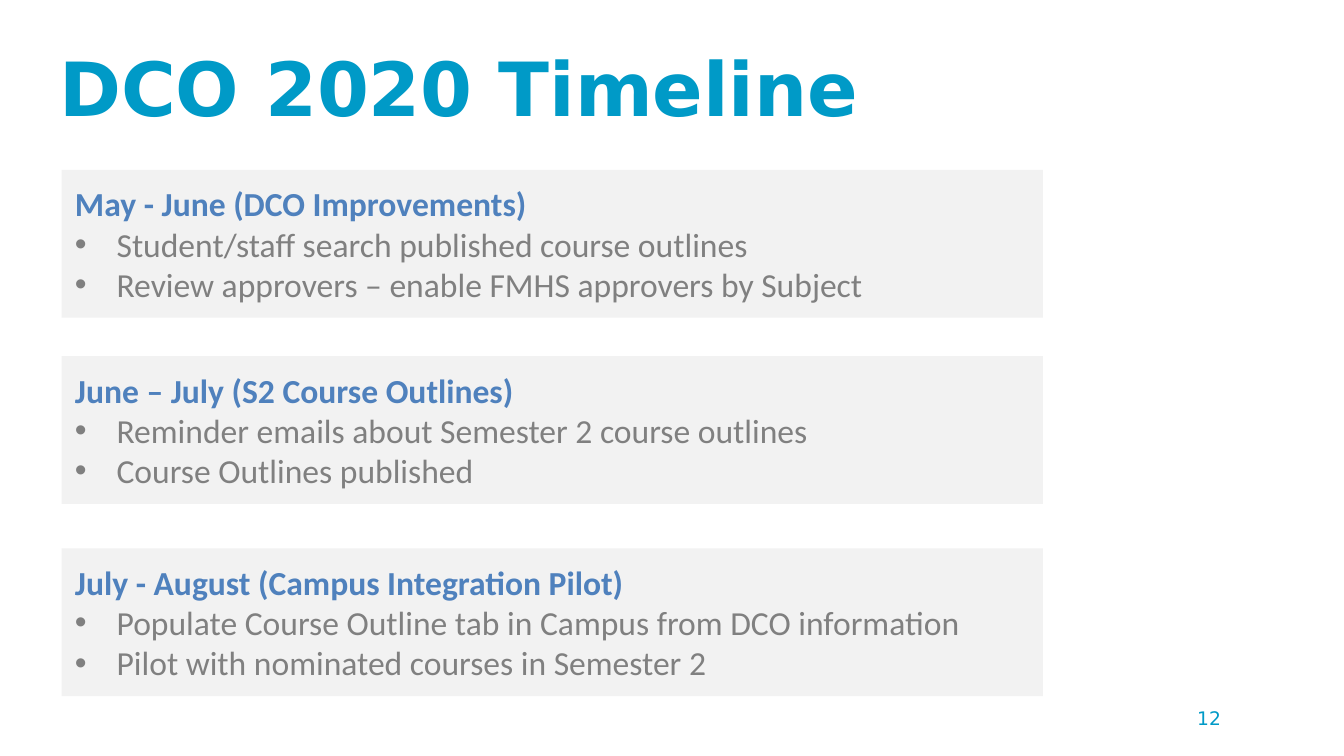
"""Build the DCO 2020 timeline slide."""
from dataclasses import dataclass

from lxml import etree
from pptx import Presentation
from pptx.dml.color import RGBColor
from pptx.enum.shapes import MSO_SHAPE
from pptx.enum.text import MSO_ANCHOR, PP_ALIGN
from pptx.oxml.ns import qn
from pptx.slide import Slide
from pptx.text.text import TextFrame, _Paragraph
from pptx.util import Emu, Pt

RECTANGLE = MSO_SHAPE.RECTANGLE
TOP, MIDDLE = MSO_ANCHOR.TOP, MSO_ANCHOR.MIDDLE
LEFT = PP_ALIGN.LEFT

EMU_PER_PX = 4572
COLORS = {
    "accent": "009AC7",
    "heading": "4F81BD",
    "body": "808080",
    "panel": "F2F2F2",
}
DISPLAY_FONT, TEXT_FONT = "DejaVu Sans", "Calibri"
PANEL_LEFT, PANEL_WIDTH, PANEL_HEIGHT = 92, 1460, 220
BULLET_INDENT = 62


@dataclass(frozen=True)
class Phase:
    top: int
    heading: str
    tasks: tuple[str, ...]


PHASES = (
    Phase(253, "May - June (DCO Improvements)", (
        "Student/staff search published course outlines",
        "Review approvers – enable FMHS approvers by Subject",
    )),
    Phase(530, "June – July (S2 Course Outlines)", (
        "Reminder emails about Semester 2 course outlines",
        "Course Outlines published",
    )),
    Phase(816, "July - August (Campus Integration Pilot)", (
        "Populate Course Outline tab in Campus from DCO information",
        "Pilot with nominated courses in Semester 2",
    )),
)


def px(length: int) -> Emu:
    return Emu(length * EMU_PER_PX)


def rgb(name: str) -> RGBColor:
    return RGBColor.from_string(COLORS[name])


def set_frame(frame: TextFrame, anchor: MSO_ANCHOR) -> None:
    frame.word_wrap = True
    frame.vertical_anchor = anchor
    frame.margin_left = frame.margin_right = px(20)
    frame.margin_top = frame.margin_bottom = px(10)


def write(paragraph: _Paragraph, text: str, *, size: int, color: str,
          font: str = TEXT_FONT, bold: bool = False, bullet: bool = False) -> None:
    paragraph.alignment = LEFT
    if bullet:
        properties = paragraph._p.get_or_add_pPr()
        properties.set("marL", str(px(BULLET_INDENT)))
        properties.set("indent", str(-px(BULLET_INDENT)))
        etree.SubElement(properties, qn("a:buFont"), typeface="Arial")
        etree.SubElement(properties, qn("a:buChar"), char="•")
    run = paragraph.add_run()
    run.text = text
    run.font.name = font
    run.font.size = Pt(size)
    run.font.bold = bold
    run.font.color.rgb = rgb(color)


def draw_title(slide: Slide, text: str) -> None:
    title = slide.shapes.title
    title.left, title.top, title.width, title.height = map(px, (68, 52, 1416, 254))
    set_frame(title.text_frame, TOP)
    write(title.text_frame.paragraphs[0], text, size=40, color="accent",
          font=DISPLAY_FONT, bold=True)


def draw_page_number(slide: Slide, number: str) -> None:
    page_number = slide.shapes.add_textbox(*map(px, (1762, 1042, 140, 78)))
    set_frame(page_number.text_frame, TOP)
    write(page_number.text_frame.paragraphs[0], number, size=10, color="accent",
          font=DISPLAY_FONT)


def draw_phase(slide: Slide, phase: Phase) -> None:
    panel = slide.shapes.add_shape(
        RECTANGLE, *map(px, (PANEL_LEFT, phase.top, PANEL_WIDTH, PANEL_HEIGHT)))
    panel.shadow.inherit = False
    panel.fill.solid()
    panel.fill.fore_color.rgb = rgb("panel")
    panel.line.fill.background()
    frame = panel.text_frame
    set_frame(frame, MIDDLE)
    write(frame.paragraphs[0], phase.heading, size=18, color="heading", bold=True)
    for task in phase.tasks:
        write(frame.add_paragraph(), task, size=18, color="body", bullet=True)


def main() -> None:
    deck = Presentation()
    deck.slide_width, deck.slide_height = px(2000), px(1125)
    slide = deck.slides.add_slide(deck.slide_layouts[5])
    draw_title(slide, "DCO 2020 Timeline")
    draw_page_number(slide, "12")
    for phase in PHASES:
        draw_phase(slide, phase)
    deck.save("out.pptx")


if __name__ == "__main__":
    main()
